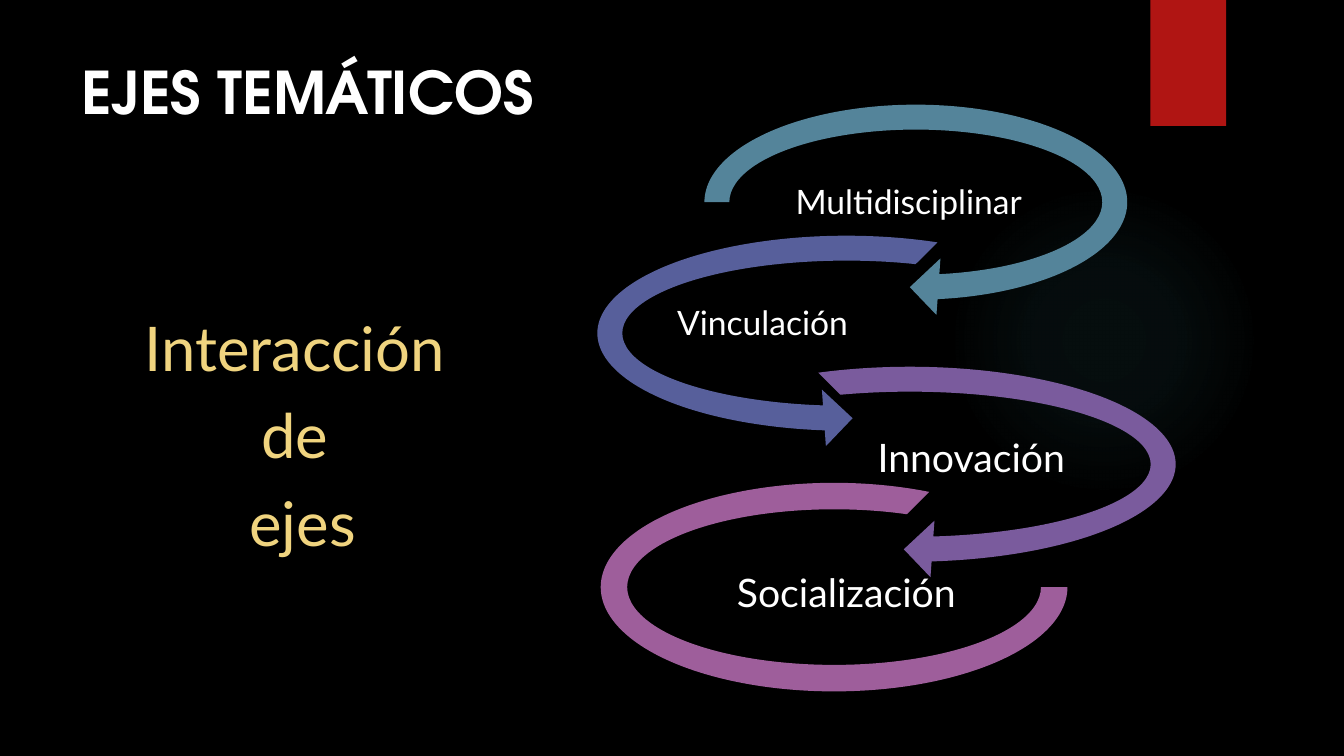
from typing import NamedTuple

import pptx
import pptx.dml.color
import pptx.enum.shapes
import pptx.enum.text
import pptx.oxml
import pptx.oxml.ns
import pptx.util

Pt = pptx.util.Pt
SHAPES = pptx.enum.shapes.MSO_SHAPE
ALIGN = pptx.enum.text.PP_ALIGN
ANCHOR = pptx.enum.text.MSO_ANCHOR

WHITE = "FFFFFF"
GLOW = "50B9C1"
BODY_FONT = "Lato"
TITLE_FONT = "TeX Gyre Adventor"


class Box(NamedTuple):
    left: float
    top: float
    width: float
    height: float


class Axis(NamedTuple):
    name: str
    size: float
    label: Box
    loop: Box
    preset: pptx.enum.shapes.MSO_SHAPE
    adjustments: tuple[float, ...]
    color: str


def loop_arrow(head_angle: float, tail_angle: float) -> tuple[float, ...]:
    """Adjustments of a circular arrow whose band and head are the same on every loop."""
    return 0.11, 11.42, head_angle, tail_angle, 0.125


AXES = [
    Axis("Multidisciplinar", 24, Box(536.4, 111.6, 225.4, 67),
         Box(491.8, 63.4, 324.7, 162), SHAPES.CIRCULAR_ARROW, loop_arrow(45, 108), "54849A"),
    Axis("Vinculación", 24, Box(438.5, 209.7, 212.4, 45),
         Box(415.4, 157, 378.7, 162), SHAPES.LEFT_CIRCULAR_ARROW, loop_arrow(63, 189), "575F9B"),
    Axis("Innovación", 28, Box(587.6, 306, 212.4, 45),
         Box(448.6, 250.6, 402.5, 162), SHAPES.CIRCULAR_ARROW, loop_arrow(45, 135), "7A5B9D"),
    Axis("Socialización", 28, Box(481, 402.5, 247, 45),
         Box(429.1, 344.9, 333.4, 149), SHAPES.BLOCK_ARC, (0, 189, 0.127), "9E5E9B"),
]


def rgb(color: str) -> pptx.dml.color.RGBColor:
    return pptx.dml.color.RGBColor.from_string(color)


def add_preset(slide, preset, box: Box, color: str, adjustments: tuple[float, ...] = ()):
    shape = slide.shapes.add_shape(preset, *map(Pt, box))
    shape.shadow.inherit = False
    shape.line.fill.background()
    shape.fill.solid()
    shape.fill.fore_color.rgb = rgb(color)
    for index, value in enumerate(adjustments):
        shape.adjustments[index] = value
    return shape


def add_text(slide, box: Box, lines: list[str], font: str, size: float, color: str,
             bold: bool = False, align=ALIGN.CENTER, anchor=ANCHOR.TOP,
             inset: tuple[float, float] = (7.2, 3.6), spacing: float = 1.0,
             gap: float = 0) -> None:
    frame = slide.shapes.add_textbox(*map(Pt, box)).text_frame
    frame.word_wrap = True
    frame.vertical_anchor = anchor
    frame.margin_left = frame.margin_right = Pt(inset[0])
    frame.margin_top = frame.margin_bottom = Pt(inset[1])
    for index, line in enumerate(lines):
        paragraph = frame.add_paragraph() if index else frame.paragraphs[0]
        paragraph.alignment = align
        paragraph.line_spacing = spacing
        if index:
            paragraph.space_before = Pt(gap)
        run = paragraph.add_run()
        run.text = line
        run.font.name = font
        run.font.size = Pt(size)
        run.font.bold = bold
        run.font.color.rgb = rgb(color)


def add_glow(slide, box: Box, stops: list[tuple[int, int]]) -> None:
    """Ellipse fading outwards; each stop is (position %, opacity %)."""
    glow = add_preset(slide, SHAPES.OVAL, box, GLOW)
    stop_xml = "".join(
        f'<a:gs pos="{position * 1000}"><a:srgbClr val="{GLOW}">'
        f'<a:alpha val="{opacity * 1000}"/></a:srgbClr></a:gs>'
        for position, opacity in stops)
    gradient = pptx.oxml.parse_xml(
        f'<a:gradFill {pptx.oxml.ns.nsdecls("a")}><a:gsLst>{stop_xml}</a:gsLst>'
        '<a:path path="circle"><a:fillToRect l="50000" t="50000" r="50000" b="50000"/>'
        '</a:path></a:gradFill>')
    properties = glow._element.spPr
    properties.replace(properties.find(pptx.oxml.ns.qn("a:solidFill")), gradient)


def main() -> None:
    deck = pptx.Presentation()
    deck.slide_width, deck.slide_height = Pt(960), Pt(540)
    slide = deck.slides.add_slide(deck.slide_layouts[6])
    slide.background.fill.solid()
    slide.background.fill.fore_color.rgb = rgb("000000")

    add_glow(slide, Box(677.5, 131.8, 221.8, 221.8), [(0, 7), (36, 6), (69, 0)])
    add_preset(slide, SHAPES.RECTANGLE, Box(821.8, 0, 54, 90), "B01513")
    add_text(slide, Box(51, 36, 741, 110), ["EJES TEMÁTICOS"], TITLE_FONT, 42, WHITE,
             bold=True, align=ALIGN.LEFT)
    add_text(slide, Box(69, 217.5, 294.5, 192), ["Interacción ", "de ", "ejes"],
             BODY_FONT, 44, "F0D47F", gap=10)

    for axis in AXES:
        add_preset(slide, axis.preset, axis.loop, axis.color, axis.adjustments)
        add_text(slide, axis.label, [axis.name], BODY_FONT, axis.size, WHITE,
                 anchor=ANCHOR.MIDDLE, inset=(1.4, 1.4), spacing=0.9)

    deck.save("out.pptx")


if __name__ == "__main__":
    main()
